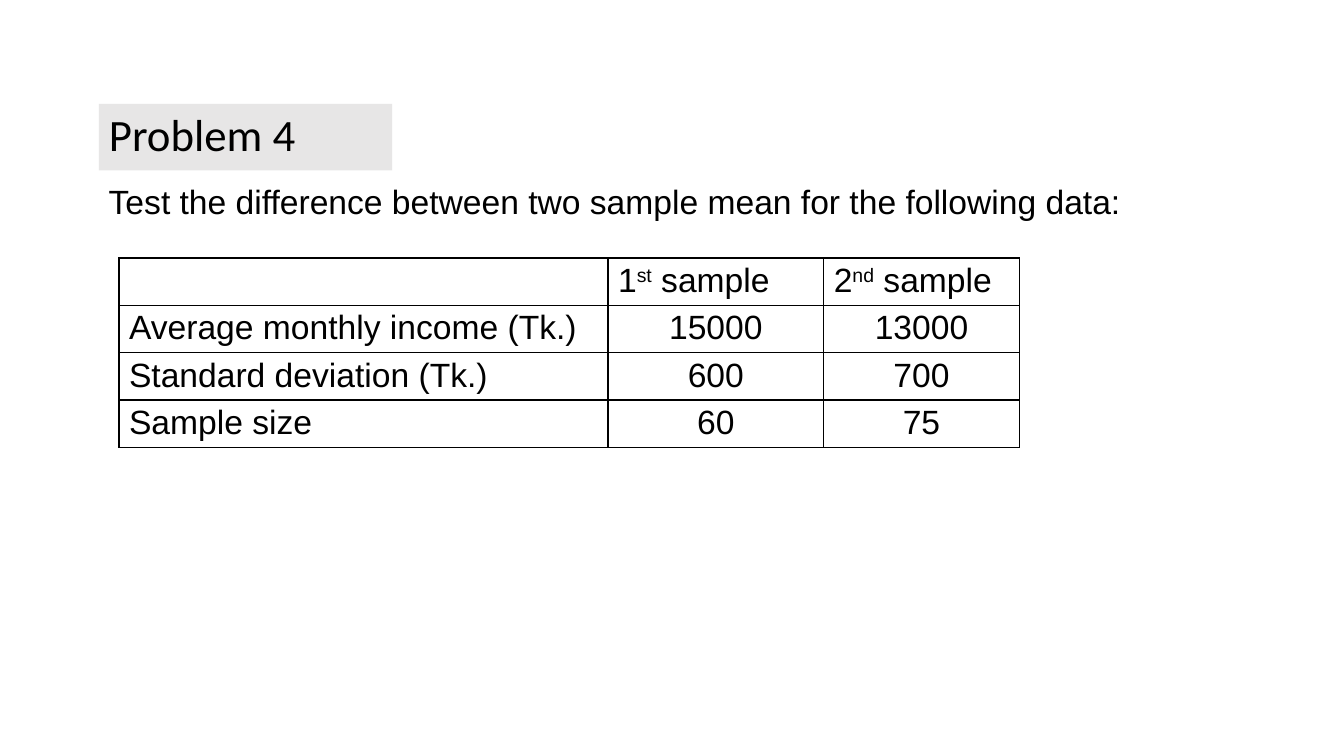
from pptx import Presentation
from pptx.dml.color import RGBColor
from pptx.enum.text import MSO_ANCHOR, MSO_AUTO_SIZE, PP_ALIGN
from pptx.oxml import parse_xml
from pptx.oxml.ns import nsdecls
from pptx.util import Inches, Pt


def color(value):
    return RGBColor.from_string(value)


def style(para, font, size):
    for span in para.runs:
        span.font.name = font
        span.font.size = Pt(size)
        span.font.color.rgb = color("000000")


deck = Presentation()
deck.slide_width = Inches(13.33)
deck.slide_height = Inches(7.5)
page = deck.slides.add_slide(deck.slide_layouts[5])

title = page.shapes.title
title.left, title.top = Inches(0.98), Inches(1.03)
title.width, title.height = Inches(2.91), Inches(0.66)
title.fill.solid()
title.fill.fore_color.rgb = color("E7E6E6")
question = page.shapes.add_textbox(Inches(0.98), Inches(1.69), Inches(11.07), Inches(0.66))

for box, words, font, size in [
    (title, "Problem 4", "Calibri", 32),
    (question, "Test the difference between two sample mean for the following data:", "Arial", 24),
]:
    frame = box.text_frame
    frame.text = words
    frame.word_wrap = True
    frame.auto_size = MSO_AUTO_SIZE.NONE
    frame.vertical_anchor = MSO_ANCHOR.MIDDLE
    para = frame.paragraphs[0]
    para.alignment = PP_ALIGN.LEFT
    para.line_spacing = 0.9
    style(para, font, size)

rows = [
    ([], ["1", "st", " sample"], ["2", "nd", " sample"]),
    (["Average monthly income (Tk.)"], ["15000"], ["13000"]),
    (["Standard deviation (Tk.)"], ["600"], ["700"]),
    (["Sample size"], ["60"], ["75"]),
]
widths = [4.85, 2.14, 1.94]
row_height = 0.47
table = page.shapes.add_table(
    len(rows), len(widths), Inches(1.18), Inches(2.56),
    Inches(sum(widths)), Inches(row_height * len(rows)),
).table
table.first_row = False
table.horz_banding = False
for column, width in zip(table.columns, widths):
    column.width = Inches(width)

for row_index, row in enumerate(rows):
    table.rows[row_index].height = Inches(row_height)
    for column_index, pieces in enumerate(row):
        cell = table.cell(row_index, column_index)
        cell.margin_top = cell.margin_bottom = Inches(0.04)
        para = cell.text_frame.paragraphs[0]
        for piece in pieces:
            span = para.add_run()
            span.text = piece
            if piece in ("st", "nd"):
                span.font._element.set("baseline", "30000")
        style(para, "Arial", 24)
        if row_index and column_index:
            para.alignment = PP_ALIGN.CENTER
        properties = cell._tc.get_or_add_tcPr()
        for side in ("lnL", "lnR", "lnT", "lnB"):
            properties.append(parse_xml(
                f'<a:{side} {nsdecls("a")} w="12700"><a:solidFill>'
                f'<a:srgbClr val="000000"/></a:solidFill></a:{side}>'
            ))
        cell.fill.background()

deck.save("out.pptx")
